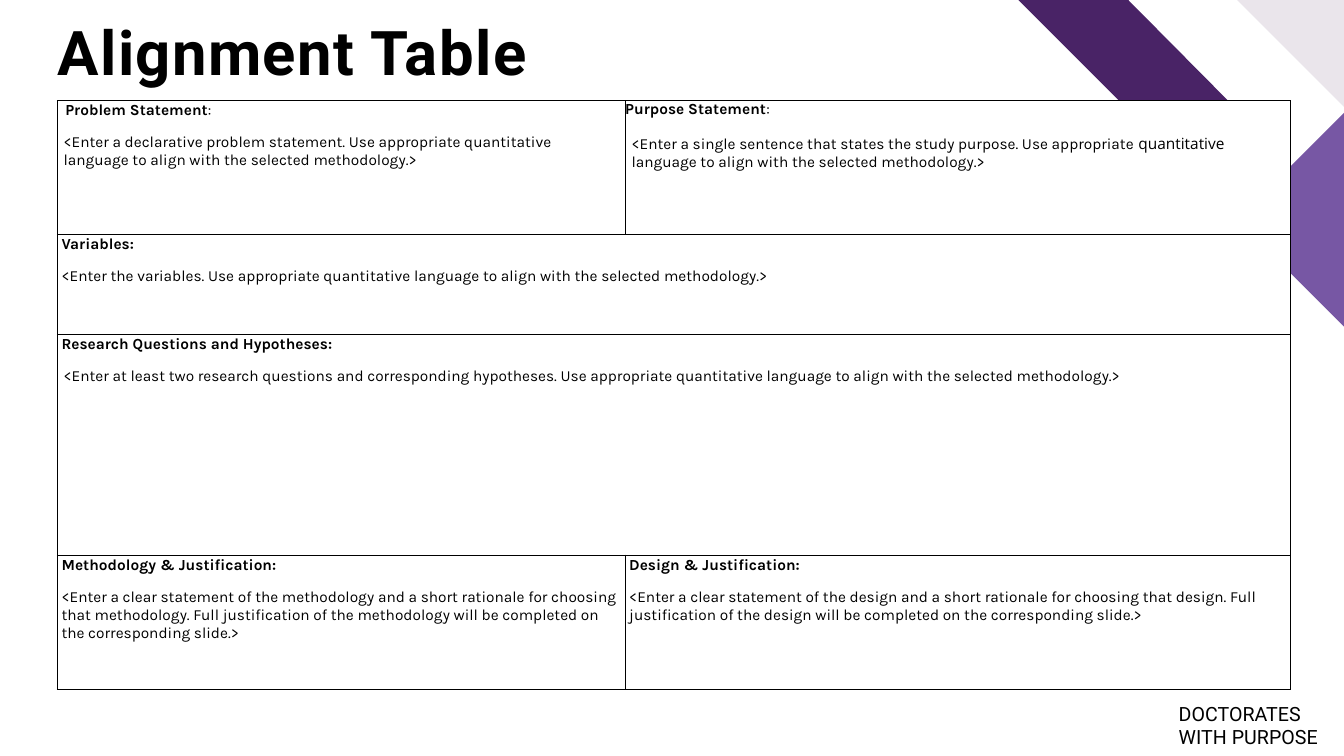
from dataclasses import dataclass

from lxml import etree
from pptx import Presentation
from pptx.dml.color import RGBColor
from pptx.enum.text import MSO_ANCHOR, MSO_AUTO_SIZE, PP_ALIGN
from pptx.oxml.ns import qn
from pptx.util import Emu, Inches, Pt

LEFT = PP_ALIGN.LEFT
TOP = MSO_ANCHOR.TOP
BOTTOM = MSO_ANCHOR.BOTTOM
FIXED = MSO_AUTO_SIZE.NONE
WIDE = Inches(13.33)
HIGH = Inches(7.5)
BLACK = "000000"
WHITE = "FFFFFF"
COLS = (42.24, 49.51)
ROWS = (17.73, 13.2, 29.2, 17.73)
EDGE = 4.28


@dataclass
class Shard:
    points: list[tuple[float, float]]
    hue: str


@dataclass
class Entry:
    row: int
    col: int
    head: str
    body: list[str]
    colon: str = ""
    pad: float = 0.3
    rise: float = 0.13
    shift: float = 0
    indent: float = 0
    span: bool = False


SHARDS = [
    Shard([(75.77, 0), (83.95, 0), (92.05, 14.53), (88, 21.73)], "492366"),
    Shard([(92.05, 0), (100, 0), (100, 14.13)], "EAE5EB"),
    Shard([(100, 43.2), (92.05, 29.07), (100, 14.93)], "7757A4"),
]

ENTRIES = [
    Entry(0, 0, "Problem Statement",
          ["<Enter a declarative problem statement. Use appropriate quantitative "
           "language to align with the selected methodology.>"],
          colon=":", shift=0.28, indent=0.15),
    Entry(0, 1, "Purpose Statement",
          ["<Enter a single sentence that states the study purpose. Use appropriate ",
           "quantitative",
           " language to align with the selected methodology.>"],
          colon=":", pad=0, rise=0, indent=0.47),
    Entry(1, 0, "Variables:",
          ["<Enter the variables. Use appropriate quantitative language to align "
           "with the selected methodology.>"],
          span=True),
    Entry(2, 0, "Research Questions and Hypotheses:",
          ["<Enter at least two research questions and corresponding hypotheses. "
           "Use appropriate quantitative language to align with the selected "
           "methodology.>"],
          indent=0.15, span=True),
    Entry(3, 0, "Methodology & Justification:",
          ["<Enter a clear statement of the methodology and a short rationale for "
           "choosing that methodology. Full justification of the methodology will "
           "be completed on the corresponding slide.>"]),
    Entry(3, 1, "Design & Justification:",
          ["<Enter a clear statement of the design and a short rationale for "
           "choosing that design. Full justification of the design will be "
           "completed on the corresponding slide.>"]),
]


def across(share: float) -> Emu:
    return Emu(round(WIDE * share / 100))


def down(share: float) -> Emu:
    return Emu(round(HIGH * share / 100))


def tint(hue: str) -> RGBColor:
    return RGBColor.from_string(hue)


def style(font, name: str, size: float, bold: bool = False) -> None:
    font.name = name
    font.size = Pt(size)
    font.bold = bold
    font.color.rgb = tint(BLACK)


def frame(shape, anchor):
    text = shape.text_frame
    text.margin_left = text.margin_right = 0
    text.margin_top = text.margin_bottom = 0
    text.word_wrap = True
    text.auto_size = FIXED
    text.vertical_anchor = anchor
    return text


def place(shape, left: float, top: float, width: float, height: float) -> None:
    shape.left, shape.top = across(left), down(top)
    shape.width, shape.height = across(width), down(height)


def draw_shard(slide, shard: Shard) -> None:
    spots = [(across(x), down(y)) for x, y in shard.points]
    pen = slide.shapes.build_freeform(*spots[0])
    pen.add_line_segments(spots[1:], close=True)
    shape = pen.convert_to_shape()
    shape.shadow.inherit = False
    shape.fill.solid()
    shape.fill.fore_color.rgb = tint(shard.hue)
    shape.line.fill.background()


def draw_title(slide) -> None:
    title = slide.shapes.title
    place(title, EDGE, 2.8, 40.51, 8.93)
    line = frame(title, BOTTOM).paragraphs[0]
    line.alignment = LEFT
    line.line_spacing = 0.9
    run = line.add_run()
    run.text = "Alignment Table"
    style(line.font, "Roboto", 44, True)
    run.font._element.set("spc", "100")


def draw_motto(slide) -> None:
    box = slide.shapes.add_textbox(0, 0, 0, 0)
    place(box, 87.7, 92.8, 10.8, 4.93)
    line = frame(box, TOP).paragraphs[0]
    line.text = "DOCTORATES WITH PURPOSE"
    style(line.font, "Roboto", 14)


def border(cell) -> None:
    props = cell._tc.get_or_add_tcPr()
    for side in ("lnL", "lnR", "lnT", "lnB"):
        line = etree.SubElement(props, qn(f"a:{side}"), w=str(Pt(1)))
        fill = etree.SubElement(line, qn("a:solidFill"))
        etree.SubElement(fill, qn("a:srgbClr"), val=BLACK)
    cell.fill.solid()
    cell.fill.fore_color.rgb = tint(WHITE)


def indent(line, share: float) -> None:
    props = line._p.get_or_add_pPr()
    props.set("marL", str(across(share)))
    props.set("indent", "0")
    line.space_after = Pt(10)


def fill_cell(table, entry: Entry) -> None:
    cell = table.cell(entry.row, entry.col)
    if entry.span:
        cell.merge(table.cell(entry.row, entry.col + 1))
    cell.margin_left = cell.margin_right = across(entry.pad)
    cell.margin_top, cell.margin_bottom = down(entry.rise), 0
    text = cell.text_frame
    head, body = text.paragraphs[0], text.add_paragraph()
    indent(head, entry.shift)
    indent(body, entry.indent)
    style(head.font, "Karla", 11, True)
    style(body.font, "Karla", 11)
    head.add_run().text = entry.head
    if entry.colon:
        colon = head.add_run()
        colon.text = entry.colon
        colon.font.bold = False
    for piece in entry.body:
        run = body.add_run()
        run.text = piece
        if piece == "quantitative":
            run.font.name = "Open Sans"


def draw_table(slide) -> None:
    table = slide.shapes.add_table(
        len(ROWS), len(COLS), across(EDGE), down(13.33),
        across(sum(COLS)), down(sum(ROWS))).table
    table.first_row = table.horz_banding = False
    for col, share in zip(table.columns, COLS):
        col.width = across(share)
    for row, share in zip(table.rows, ROWS):
        row.height = down(share)
    for cell in table.iter_cells():
        border(cell)
    for entry in ENTRIES:
        fill_cell(table, entry)


def main() -> None:
    deck = Presentation()
    deck.slide_width, deck.slide_height = WIDE, HIGH
    slide = deck.slides.add_slide(deck.slide_layouts[5])
    for shard in SHARDS:
        draw_shard(slide, shard)
    draw_title(slide)
    draw_motto(slide)
    draw_table(slide)
    deck.save("out.pptx")


if __name__ == "__main__":
    main()
